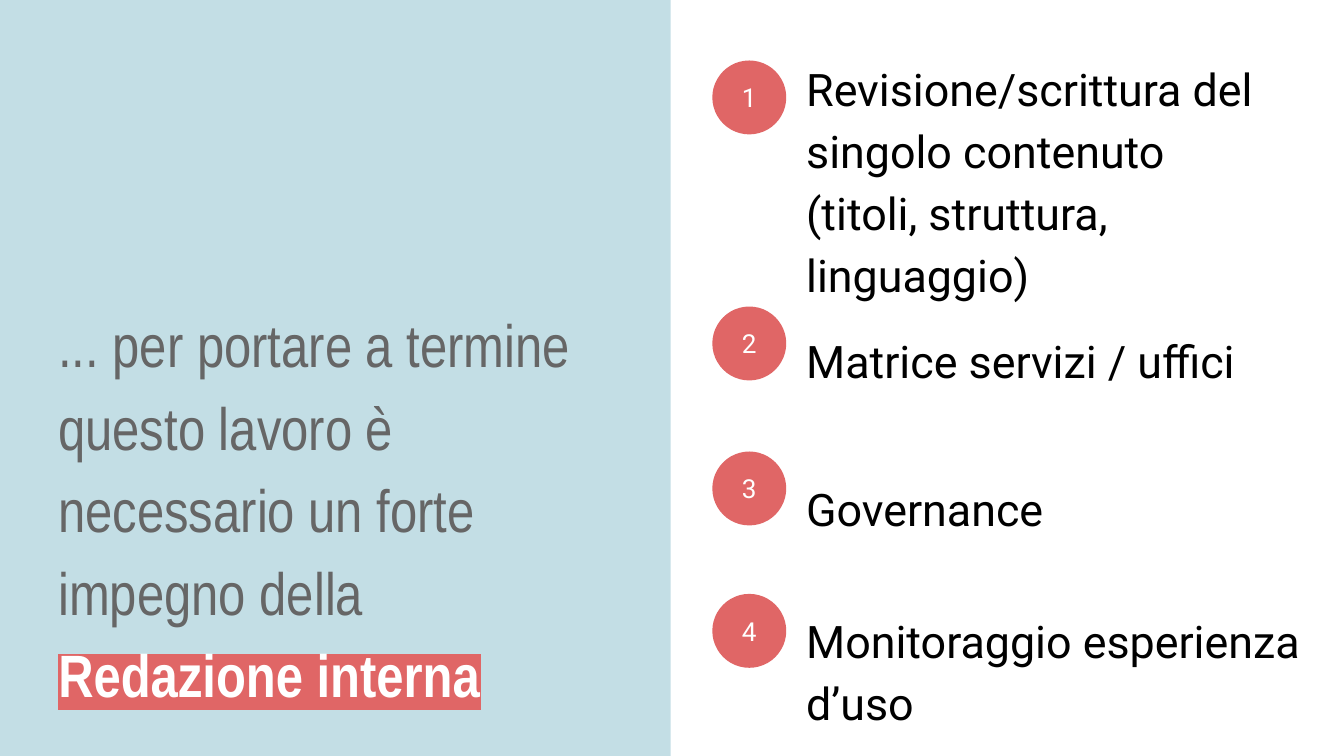
import pptx
import pptx.util
import pptx.dml.color
import pptx.enum.shapes
import pptx.enum.text
import pptx.oxml
import pptx.oxml.ns

Pt = pptx.util.Pt
RGBColor = pptx.dml.color.RGBColor
Anchor = pptx.enum.text.MSO_ANCHOR
Align = pptx.enum.text.PP_ALIGN
Shape = pptx.enum.shapes.MSO_SHAPE

PALE_BLUE = RGBColor(0xC3, 0xDE, 0xE5)
CORAL = RGBColor(0xE0, 0x66, 0x66)
GREY = RGBColor(0x66, 0x66, 0x66)
WHITE = RGBColor(0xFF, 0xFF, 0xFF)
BLACK = RGBColor(0, 0, 0)

WIDTH, HEIGHT = 720, 405
INSET = 7.2
BADGE = 39.6

# Badge top, text top, text height, wording
STEPS = [
    (32.4, 35.3, 119.5,
     "Revisione/scrittura del singolo contenuto \n(titoli, struttura, linguaggio)"),
    (164.2, 168.5, 45.4, "Matrice servizi / uffici"),
    (241.9, 247.7, 45.4, "Governance"),
    (318.2, 318.2, 79.2, "Monitoraggio esperienza d’uso"),
]


def set_frame(frame, anchor):
    frame.word_wrap = True
    frame.auto_size = pptx.enum.text.MSO_AUTO_SIZE.NONE
    frame.vertical_anchor = anchor
    frame.margin_left = frame.margin_right = Pt(INSET)
    frame.margin_top = frame.margin_bottom = Pt(INSET)


def write(para, text, font="Roboto", size=24, color=BLACK, bold=False,
          align=Align.LEFT, line=None, after=0, highlight=None):
    para.alignment = align
    para.line_spacing = line
    para.space_before, para.space_after = Pt(0), Pt(after)
    for index, part in enumerate(text.split("\n")):
        if index:
            para.add_line_break()
        span = para.add_run()
        span.text = part
        span.font.name, span.font.size = font, Pt(size)
        span.font.bold = bold
        span.font.color.rgb = color
        if highlight is not None:
            mark = pptx.oxml.parse_xml(
                f'<a:highlight {pptx.oxml.ns.nsdecls("a")}>'
                f'<a:srgbClr val="{highlight}"/></a:highlight>')
            fill = span.font._element.find(pptx.oxml.ns.qn("a:solidFill"))
            fill.addnext(mark)


def add_plain_shape(page, kind, left, top, width, height, color):
    shape = page.shapes.add_shape(kind, Pt(left), Pt(top), Pt(width), Pt(height))
    shape.shadow.inherit = False
    shape.fill.solid()
    shape.fill.fore_color.rgb = color
    shape.line.fill.background()
    return shape


def add_message(page, left, top, width, height):
    """Title, resting on the bottom of its box."""
    title = page.shapes.title
    title.left, title.top = Pt(left), Pt(top)
    title.width, title.height = Pt(width), Pt(height)
    frame = title.text_frame
    set_frame(frame, Anchor.BOTTOM)
    style = {"font": "Arial Narrow", "size": 32, "line": 1.15}
    write(frame.paragraphs[0],
          "... per portare a termine questo lavoro è necessario un forte impegno della",
          color=GREY, **style)
    write(frame.add_paragraph(), "Redazione interna",
          color=WHITE, bold=True, highlight=CORAL, **style)


def add_steps(page, left, top, width, height):
    """White panel with numbered steps."""
    add_plain_shape(page, Shape.RECTANGLE, left, top, width, height, WHITE)
    for number, (badge_top, text_top, text_height, text) in enumerate(STEPS, 1):
        # Numbered badge
        badge = add_plain_shape(page, Shape.OVAL, left + 22.3, top + badge_top,
                                BADGE, BADGE, CORAL)
        set_frame(badge.text_frame, Anchor.MIDDLE)
        write(badge.text_frame.paragraphs[0], str(number),
              size=14, color=WHITE, align=Align.CENTER)
        # Step wording
        box = page.shapes.add_textbox(Pt(left + 65.5), Pt(top + text_top),
                                      Pt(width - 73.4), Pt(text_height))
        set_frame(box.text_frame, Anchor.MIDDLE)
        write(box.text_frame.paragraphs[0], text, line=1.15, after=18)


def main():
    deck = pptx.Presentation()
    deck.slide_width, deck.slide_height = Pt(WIDTH), Pt(HEIGHT)
    page = deck.slides.add_slide(deck.slide_layouts.get_by_name("Title Only"))
    page.background.fill.solid()
    page.background.fill.fore_color.rgb = PALE_BLUE

    split = 359.3
    add_steps(page, split, 0, WIDTH - split, HEIGHT)
    add_message(page, 24, 229.7, 327.6, 157.7)
    deck.save("out.pptx")


if __name__ == "__main__":
    main()
